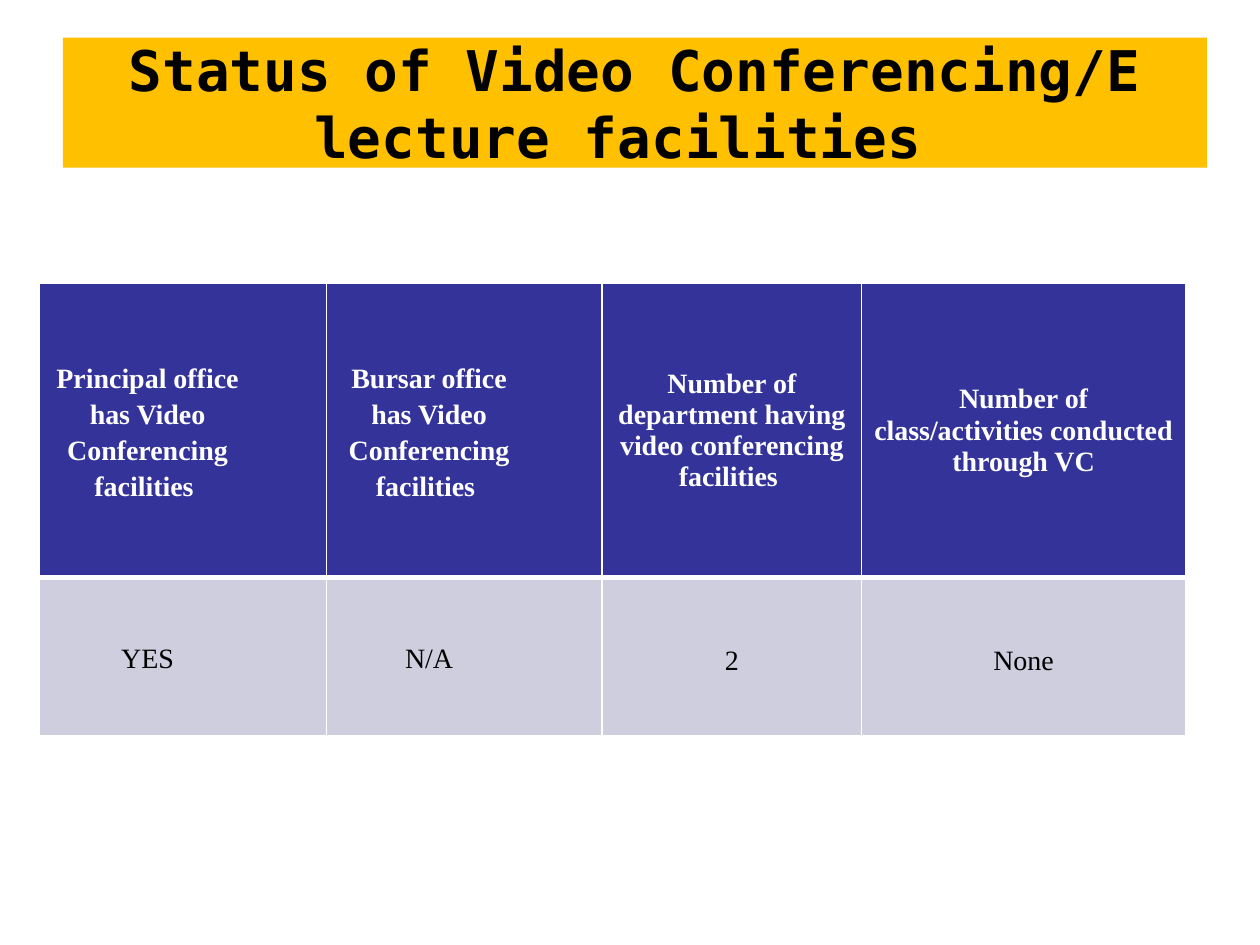
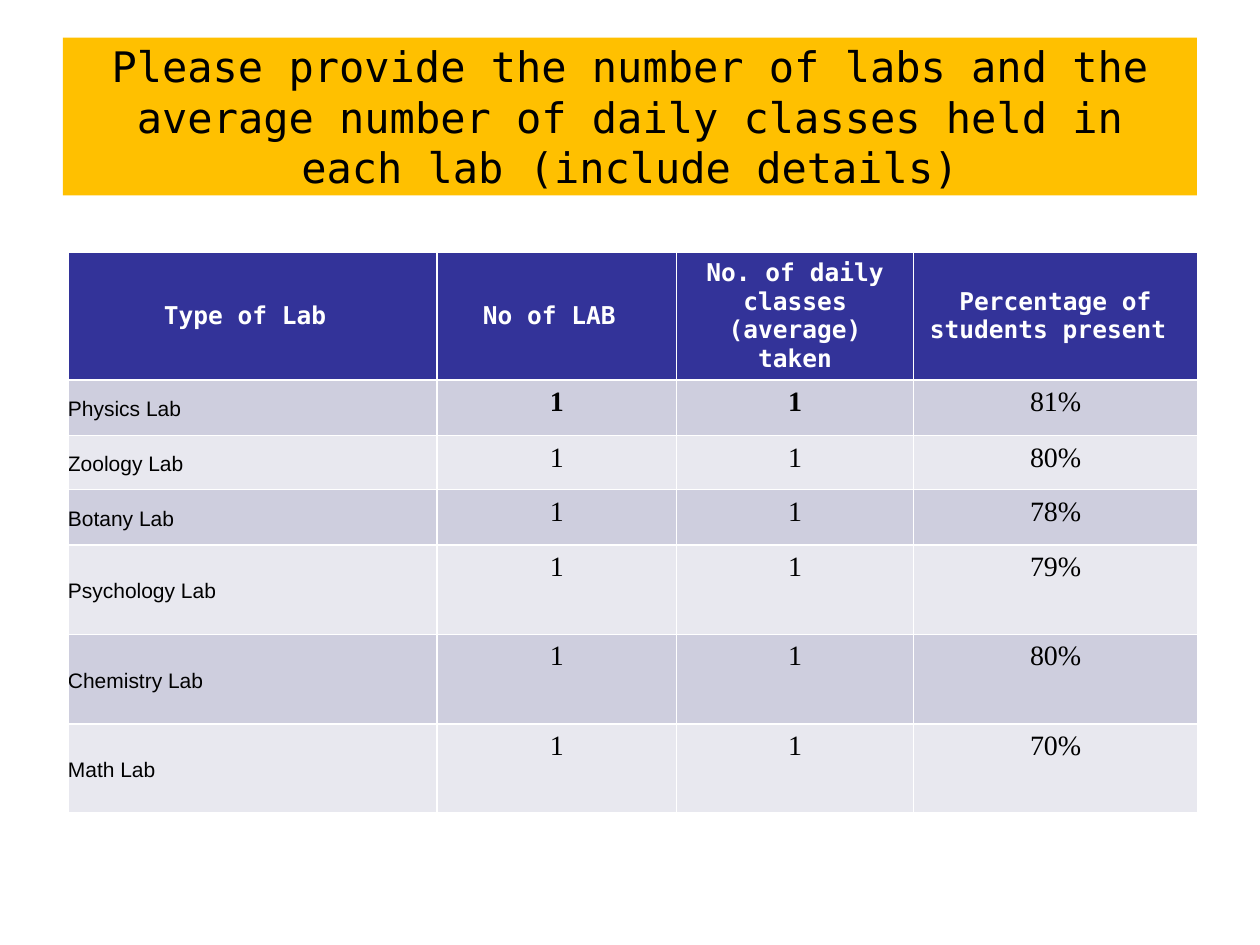
from dataclasses import dataclass, replace

from lxml import etree
from pptx import Presentation
from pptx.dml.color import RGBColor
from pptx.enum.shapes import MSO_SHAPE
from pptx.enum.text import MSO_ANCHOR, PP_ALIGN
from pptx.oxml.ns import qn
from pptx.util import Cm, Pt

RECTANGLE = MSO_SHAPE.RECTANGLE
LEFT, CENTER = PP_ALIGN.LEFT, PP_ALIGN.CENTER
TOP, MIDDLE = MSO_ANCHOR.TOP, MSO_ANCHOR.MIDDLE

COLORS = {
    "band": "FFC000",
    "header": "333399",
    "odd_row": "CECEDE",
    "even_row": "E8E8EF",
    "light": "FFFFFF",
    "dark": "000000",
}
MONO, SERIF, SANS = "DejaVu Sans Mono", "Times New Roman", "Arial"


@dataclass(frozen=True)
class CellStyle:
    font: str = SERIF
    size: int = 16
    bold: bool = False
    color: str = "dark"
    align: PP_ALIGN = CENTER
    anchor: MSO_ANCHOR = TOP
    line_spacing: float = 1.0
    margins: tuple = (0.25, 0.13, 0.25, 0.13)  # left, top, right, bottom in cm


VALUE = CellStyle()
BOLD_VALUE = replace(VALUE, bold=True)
LOW_VALUE = replace(VALUE, margins=(0.25, 1.37, 0.25, 0.13))
HEADER = CellStyle(bold=True, color="light", anchor=MIDDLE)
MONO_HEADER = replace(HEADER, font=MONO, size=14)
# Office columns keep a wide right margin
OFFICE_VALUE = replace(VALUE, anchor=MIDDLE, line_spacing=1.15,
                       margins=(0.18, 0, 1.6, 0))
OFFICE_HEADER = replace(OFFICE_VALUE, bold=True, color="light")
LAB_NAME = CellStyle(font=SANS, size=12, align=LEFT, anchor=MIDDLE,
                     line_spacing=1.15, margins=(0, 0, 0, 0))


def rgb(name):
    return RGBColor.from_string(COLORS[name])


def write(paragraph, text, font, size, bold, color, align):
    paragraph.text = text
    paragraph.alignment = align
    paragraph.font.name = font
    paragraph.font.size = Pt(size)
    paragraph.font.bold = bold
    paragraph.font.color.rgb = rgb(color)


def add_title_band(slide, box, text, size, bold):
    band = slide.shapes.add_shape(RECTANGLE, *(Cm(length) for length in box))
    band.shadow.inherit = False
    band.fill.solid()
    band.fill.fore_color.rgb = rgb("band")
    band.line.fill.background()
    frame = band.text_frame
    frame.word_wrap = True
    frame.vertical_anchor = MIDDLE
    write(frame.paragraphs[0], text, MONO, size, bold, "dark", CENTER)


def add_borders(cell, top, bottom):
    """White rules; must come before the fill in the cell properties."""
    properties = cell._tc.get_or_add_tcPr()
    for side, width in (("L", 1), ("R", 1), ("T", top), ("B", bottom)):
        line = etree.SubElement(properties, qn(f"a:ln{side}"), w=str(Pt(width)))
        fill = etree.SubElement(line, qn("a:solidFill"))
        etree.SubElement(fill, qn("a:srgbClr"), val=COLORS["light"])


def fill_cell(cell, text, style, background):
    cell.fill.solid()
    cell.fill.fore_color.rgb = rgb(background)
    cell.vertical_anchor = style.anchor
    (cell.margin_left, cell.margin_top,
     cell.margin_right, cell.margin_bottom) = map(Cm, style.margins)
    paragraph = cell.text_frame.paragraphs[0]
    write(paragraph, text, style.font, style.size, style.bold,
          style.color, style.align)
    paragraph.line_spacing = style.line_spacing


def add_grid(slide, corner, widths, heights, rows, styles, header_rule=1):
    """Place a table at corner; styles holds one CellStyle for each cell."""
    left, top = corner
    table = slide.shapes.add_table(
        len(heights), len(widths), Cm(left), Cm(top),
        Cm(sum(widths)), Cm(sum(heights))).table
    table.horz_banding = False
    for column, width in zip(table.columns, widths):
        column.width = Cm(width)
    for row, height in zip(table.rows, heights):
        row.height = Cm(height)
    for r, (texts, row_styles) in enumerate(zip(rows, styles)):
        if r == 0:
            background = "header"
        else:
            background = "odd_row" if r % 2 else "even_row"
        for c, (text, style) in enumerate(zip(texts, row_styles)):
            cell = table.cell(r, c)
            add_borders(cell, top=header_rule if r == 1 else 1,
                        bottom=header_rule if r == 0 else 1)
            fill_cell(cell, text, style, background)


def build_conferencing_slide(slide):
    add_title_band(slide, (1.27, 0.76, 23.06, 2.62),
                   "Status of Video Conferencing/E lecture facilities ", 32, True)
    facilities = [
        ("Principal office has Video Conferencing facilities ",
         "Bursar office has Video Conferencing facilities ",
         "Number of department having video conferencing facilities ",
         "Number of class/activities conducted through VC"),
        ("YES", "N/A", "2", "None"),
    ]
    styles = [[OFFICE_HEADER] * 2 + [HEADER] * 2,
              [OFFICE_VALUE] * 2 + [LOW_VALUE] * 2]
    add_grid(slide, (0.79, 5.72), (5.79, 5.56, 5.23, 6.53), (5.92, 3.2),
             facilities, styles, header_rule=3)


def build_labs_slide(slide):
    add_title_band(slide, (1.27, 0.76, 22.86, 3.18),
                   "Please provide the number of labs and the average number of "
                   "daily classes held in each lab (include details)", 24, False)
    attendance = {"Physics": 81, "Zoology": 80, "Botany": 78,
                  "Psychology": 79, "Chemistry": 80, "Math": 70}
    labs = [("Type of Lab ", "No of LAB ", "No. of daily classes (average) taken",
             "Percentage of students present ")]
    labs += [(f"{subject} Lab", "1", "1", f"{percent}%")
             for subject, percent in attendance.items()]
    styles = [[MONO_HEADER] * 4, [LAB_NAME, BOLD_VALUE, BOLD_VALUE, VALUE]]
    styles += [[LAB_NAME] + [VALUE] * 3] * (len(attendance) - 1)
    add_grid(slide, (1.37, 5.08), (7.44, 4.83, 4.78, 5.72),
             (2.49, 1.12, 1.09, 1.12, 1.8, 1.8, 1.8), labs, styles)


def main():
    deck = Presentation()
    deck.slide_width, deck.slide_height = Cm(25.4), Cm(19.05)
    blank = deck.slide_layouts[6]
    for build in (build_conferencing_slide, build_labs_slide):
        build(deck.slides.add_slide(blank))
    deck.save("out.pptx")


if __name__ == "__main__":
    main()
